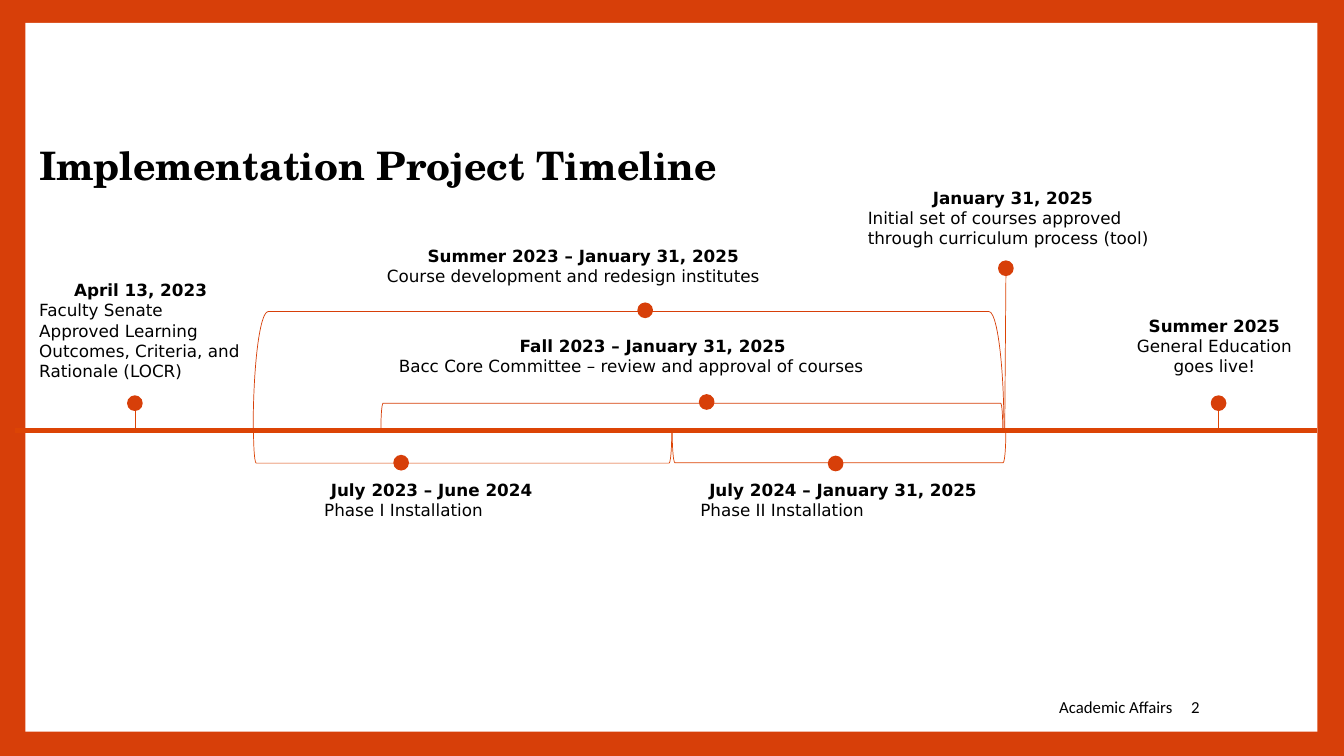
from lxml.etree import SubElement
from pptx import Presentation
from pptx.dml.color import RGBColor
from pptx.enum.shapes import MSO_CONNECTOR as Connector, MSO_SHAPE as Shape
from pptx.enum.text import MSO_ANCHOR as Anchor, PP_ALIGN as Align
from pptx.oxml.ns import qn
from pptx.util import Cm, Pt

COLORS = {"frame": "D73F09", "line": "DC4405", "panel": "FFFFFF", "text": "000000"}

TITLE = {"name": "TeX Gyre Schola", "size": Pt(28), "bold": True}
DATE = {"name": "DejaVu Sans", "size": Pt(12), "bold": True}
DETAIL = {**DATE, "bold": False}
FOOTER = {"name": "Calibri", "size": Pt(12)}

DOT_SIZE = 0.36
AXIS_Y = 10.85

MILESTONES = [
    ((0.74, 6.93, 5.61, 2.82), "April 13, 2023",
     "Faculty Senate Approved Learning Outcomes, Criteria, and Rationale (LOCR)",
     Align.LEFT, (3.4, 10.16)),
    ((9.5, 6.07, 10.41, 1.27), "Summer 2023 – January 31, 2025",
     "Course development and redesign institutes", Align.LEFT, (16.26, 7.82)),
    ((9.8, 8.33, 13.31, 1.27), "Fall 2023 – January 31, 2025",
     "Bacc Core Committee – review and approval of courses", Align.LEFT, (17.81, 10.13)),
    ((28.09, 7.82, 5.03, 1.8), "Summer 2025",
     "General Education goes live!", Align.CENTER, (30.71, 10.16)),
    ((21.62, 4.6, 7.82, 1.8), "January 31, 2025",
     "Initial set of courses approved through curriculum process (tool)",
     Align.LEFT, (25.35, 6.76)),
    ((7.92, 11.96, 5.92, 1.27), "July 2023 – June 2024",
     "Phase I Installation", Align.LEFT, (10.11, 11.66)),
    ((17.4, 11.96, 7.7, 1.27), "July 2024 – January 31, 2025",
     "Phase II Installation", Align.LEFT, (21.06, 11.68)),
]

PERIODS = [
    ((9.6, 10.16, 15.67, 0.64), 90, "frame", 0.083),
    ((6.38, 7.85, 18.92, 2.97), 90, "frame", 0.128),
    ((6.39, 10.86, 10.54, 0.81), 270, "line", 0.083),
    ((16.94, 10.82, 8.41, 0.84), 270, "line", 0.083),
]

STEMS = [
    ((3.4, 10.8), (3.4, 10.06)),
    ((25.32, AXIS_Y), (25.35, 6.93)),
    ((30.71, AXIS_Y), (30.71, 10.16)),
]


def rgb(color):
    return RGBColor.from_string(COLORS[color])


def add_outline(element, color, width):
    element.line.color.rgb = rgb(color)
    element.line.width = Pt(width)


def add_filled(slide, kind, box, color):
    figure = slide.shapes.add_shape(kind, *map(Cm, box))
    figure.shadow.inherit = False
    figure.fill.solid()
    figure.fill.fore_color.rgb = rgb(color)
    figure.line.fill.background()
    return figure


def add_dot(slide, center):
    left, top = (position - DOT_SIZE / 2 for position in center)
    dot = add_filled(slide, Shape.OVAL, (left, top, DOT_SIZE, DOT_SIZE), "frame")
    add_outline(dot, "frame", 1)


def add_line(slide, start, end, width):
    line = slide.shapes.add_connector(Connector.STRAIGHT, *map(Cm, start + end))
    add_outline(line, "line", width)
    SubElement(line._element.spPr, qn("a:effectLst"))


def add_period(slide, box, rotation, color, curve):
    left, top, span, depth = box
    shift = (span - depth) / 2
    bracket = slide.shapes.add_shape(
        Shape.LEFT_BRACKET, Cm(left + shift), Cm(top - shift), Cm(depth), Cm(span))
    bracket.shadow.inherit = False
    bracket.rotation = rotation
    bracket.adjustments[0] = curve
    bracket.fill.background()
    add_outline(bracket, color, 0.5)


def add_text(slide, box, lines, anchor=Anchor.TOP):
    frame = slide.shapes.add_textbox(*map(Cm, box)).text_frame
    frame.word_wrap = True
    frame.vertical_anchor = anchor
    for index, (text, style, align) in enumerate(lines):
        paragraph = frame.add_paragraph() if index else frame.paragraphs[0]
        paragraph.alignment = align
        run = paragraph.add_run()
        run.text = text
        run.font.color.rgb = rgb("text")
        for attribute, value in style.items():
            setattr(run.font, attribute, value)


def main():
    deck = Presentation()
    deck.slide_width, deck.slide_height = Cm(33.87), Cm(19.05)
    slide = deck.slides.add_slide(deck.slide_layouts[6])
    slide.background.fill.solid()
    slide.background.fill.fore_color.rgb = rgb("frame")
    add_filled(slide, Shape.RECTANGLE, (0.64, 0.58, 32.56, 17.86), "panel")

    add_text(slide, (0.74, 3.43, 30.63, 1.45),
             [("Implementation Project Timeline", TITLE, Align.LEFT)])
    add_line(slide, (0.38, AXIS_Y), (33.2, AXIS_Y), 3)
    for start, end in STEMS:
        add_line(slide, start, end, 0.5)
    for period in PERIODS:
        add_period(slide, *period)
    for box, date, detail, align, center in MILESTONES:
        add_text(slide, box, [(date, DATE, Align.CENTER), (detail, DETAIL, align)])
        add_dot(slide, center)

    add_text(slide, (11.23, 17.3, 18.57, 1.02),
             [("Academic Affairs", FOOTER, Align.RIGHT)], Anchor.MIDDLE)
    add_text(slide, (29.77, 17.3, 1.75, 1.02),
             [("2", FOOTER, Align.LEFT)], Anchor.MIDDLE)
    deck.save("out.pptx")


if __name__ == "__main__":
    main()
